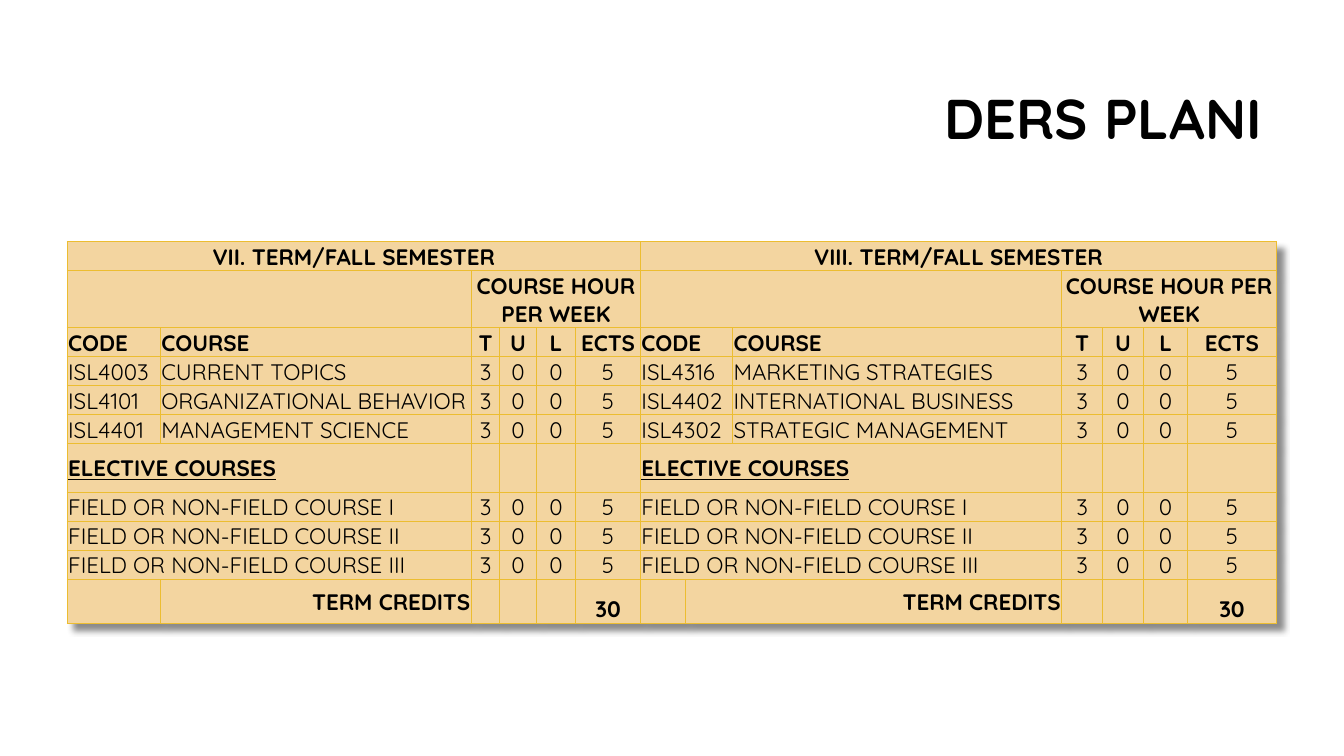
from dataclasses import dataclass

from lxml import etree
from pptx import Presentation
from pptx import util as u
from pptx.dml import color
from pptx.enum import text
from pptx.oxml import ns


@dataclass(frozen=True)
class Theme:
    font: str = "Quicksand"
    ink: str = "000000"
    cell: str = "F3D5A0"
    border: str = "ECBD31"
    shadow: str = "000000"
    title_size: int = 40
    table_size: int = 16
    border_width: float = 0.75
    cell_inset: float = 0.01


@dataclass(frozen=True)
class Term:
    """One half of the table, with the columns where its parts begin."""
    heading: str
    code: int
    course: int
    hours: int
    courses: tuple


LEFT, CENTER, RIGHT = text.PP_ALIGN.LEFT, text.PP_ALIGN.CENTER, text.PP_ALIGN.RIGHT
MIDDLE, BOTTOM = text.MSO_ANCHOR.MIDDLE, text.MSO_ANCHOR.BOTTOM

TERMS = (
    Term("VII. TERM/FALL SEMESTER", 0, 1, 2, (
        ("ISL4003", "CURRENT TOPICS"),
        ("ISL4101", "ORGANIZATIONAL BEHAVIOR"),
        ("ISL4401", "MANAGEMENT SCIENCE"))),
    Term("VIII. TERM/FALL SEMESTER", 6, 8, 9, (
        ("ISL4316", "MARKETING STRATEGIES"),
        ("ISL4402", "INTERNATIONAL BUSINESS"),
        ("ISL4302", "STRATEGIC MANAGEMENT"))),
)
HOUR_NAMES = ("T", "U", "L", "ECTS")
HOURS = ("3", "0", "0", "5")
ELECTIVES = [f"FIELD OR NON-FIELD COURSE {number}" for number in ("I", "II", "III")]

# Relative widths and heights of the table grid
COLUMNS = (92, 307, 28, 36, 39, 64, 44, 47, 325, 40, 41, 43, 88)
ROWS = (28, 56, 28, 28, 28, 28, 48, 28, 28, 28, 43)
FIRST_COURSE, ELECTIVE_HEADING, FIRST_ELECTIVE, CREDITS = 3, 6, 7, 10


class SlideBuilder:
    def __init__(self, presentation, theme):
        self.theme = theme
        self.width = presentation.slide_width
        self.height = presentation.slide_height
        self.slide = presentation.slides.add_slide(presentation.slide_layouts[6])

    def box(self, left, top, width, height):
        """Turn shares of the slide into lengths."""
        return (int(left * self.width), int(top * self.height),
                int(width * self.width), int(height * self.height))

    def format_text(self, paragraph, size, align, bold, underline=False):
        paragraph.alignment = align
        for run in paragraph.runs:
            font = run.font
            font.name, font.size = self.theme.font, u.Pt(size)
            font.bold, font.underline = bold, underline
            font.color.rgb = color.RGBColor.from_string(self.theme.ink)

    def title(self, wording, *shares):
        frame = self.slide.shapes.add_textbox(*self.box(*shares)).text_frame
        frame.word_wrap = True
        frame.vertical_anchor = MIDDLE
        frame.text = wording
        frame.paragraphs[0].line_spacing = 0.9
        self.format_text(frame.paragraphs[0], self.theme.title_size, RIGHT, True)

    def table(self, columns, rows, *shares):
        left, top, width, height = self.box(*shares)
        frame = self.slide.shapes.add_table(len(rows), len(columns), left, top, width, height)
        self.grid = frame.table
        self.grid.first_row = self.grid.horz_banding = False
        for column, weight in zip(self.grid.columns, columns):
            column.width = int(width * weight / sum(columns))
        for row, weight in zip(self.grid.rows, rows):
            row.height = int(height * weight / sum(rows))
        for cell in self.grid.iter_cells():
            self.style_cell(cell)
        self.table_shadow()

    def style_cell(self, cell):
        inset = u.Inches(self.theme.cell_inset)
        cell.margin_left = cell.margin_right = cell.margin_top = inset
        cell.margin_bottom = 0
        cell.vertical_anchor = MIDDLE
        properties = cell._tc.get_or_add_tcPr()
        for side in ("a:lnL", "a:lnR", "a:lnT", "a:lnB"):
            line = etree.SubElement(properties, ns.qn(side),
                                    w=str(u.Pt(self.theme.border_width)))
            fill = etree.SubElement(line, ns.qn("a:solidFill"))
            etree.SubElement(fill, ns.qn("a:srgbClr"), val=self.theme.border)
        cell.fill.solid()
        cell.fill.fore_color.rgb = color.RGBColor.from_string(self.theme.cell)
        # Keep empty cells from stretching their row
        ending = cell.text_frame.paragraphs[0]._p.get_or_add_endParaRPr()
        ending.set("sz", str(self.theme.table_size * 100))

    def table_shadow(self):
        effects = etree.Element(ns.qn("a:effectLst"))
        shadow = etree.SubElement(effects, ns.qn("a:outerShdw"), blurRad=str(u.Pt(4)),
                                  dist=str(u.Pt(7)), dir="2700000", algn="tl",
                                  rotWithShape="0")
        tint = etree.SubElement(shadow, ns.qn("a:srgbClr"), val=self.theme.shadow)
        etree.SubElement(tint, ns.qn("a:alpha"), val="45000")
        self.grid._tbl.tblPr.insert(0, effects)

    def cell(self, row, first, last, wording="", align=LEFT, bold=False,
             underline=False, anchor=MIDDLE):
        """Fill one cell, merged from column first to column last."""
        cell = self.grid.cell(row, first)
        if last > first:
            cell.merge(self.grid.cell(row, last))
        cell.vertical_anchor = anchor
        if wording:
            paragraph = cell.text_frame.paragraphs[0]
            paragraph.text = wording
            self.format_text(paragraph, self.theme.table_size, align, bold, underline)

    def hours(self, row, first, values, bold=False):
        for column, value in enumerate(values, first):
            self.cell(row, column, column, value, CENTER, bold)

    def term(self, term):
        code, course, hours = term.code, term.course, term.hours
        last = hours + len(HOURS) - 1

        # Headings
        self.cell(0, code, last, term.heading, CENTER, True)
        self.cell(1, code, course)
        self.cell(1, hours, last, "COURSE HOUR PER WEEK", CENTER, True)
        self.cell(2, code, course - 1, "CODE", bold=True)
        self.cell(2, course, course, "COURSE", bold=True)
        self.hours(2, hours, HOUR_NAMES, True)

        # Required courses
        for row, (number, name) in enumerate(term.courses, FIRST_COURSE):
            self.cell(row, code, course - 1, number)
            self.cell(row, course, course, name)
            self.hours(row, hours, HOURS)

        # Elective courses
        self.cell(ELECTIVE_HEADING, code, course, "ELECTIVE COURSES",
                  bold=True, underline=True)
        for row, name in enumerate(ELECTIVES, FIRST_ELECTIVE):
            self.cell(row, code, course, name)
            self.hours(row, hours, HOURS)

        # Credits
        self.cell(CREDITS, code + 1, course, "TERM CREDITS", RIGHT, True)
        self.cell(CREDITS, last, last, "30", CENTER, True, anchor=BOTTOM)


def main():
    presentation = Presentation()
    presentation.slide_width = u.Inches(13.33)
    presentation.slide_height = u.Inches(7.5)
    builder = SlideBuilder(presentation, Theme())
    builder.table(COLUMNS, ROWS, 0.05, 0.32, 0.9, 0.5)
    for term in TERMS:
        builder.term(term)
    builder.title("DERS PLANI", 0.24, 0.1, 0.706, 0.12)
    presentation.save("out.pptx")


if __name__ == "__main__":
    main()
